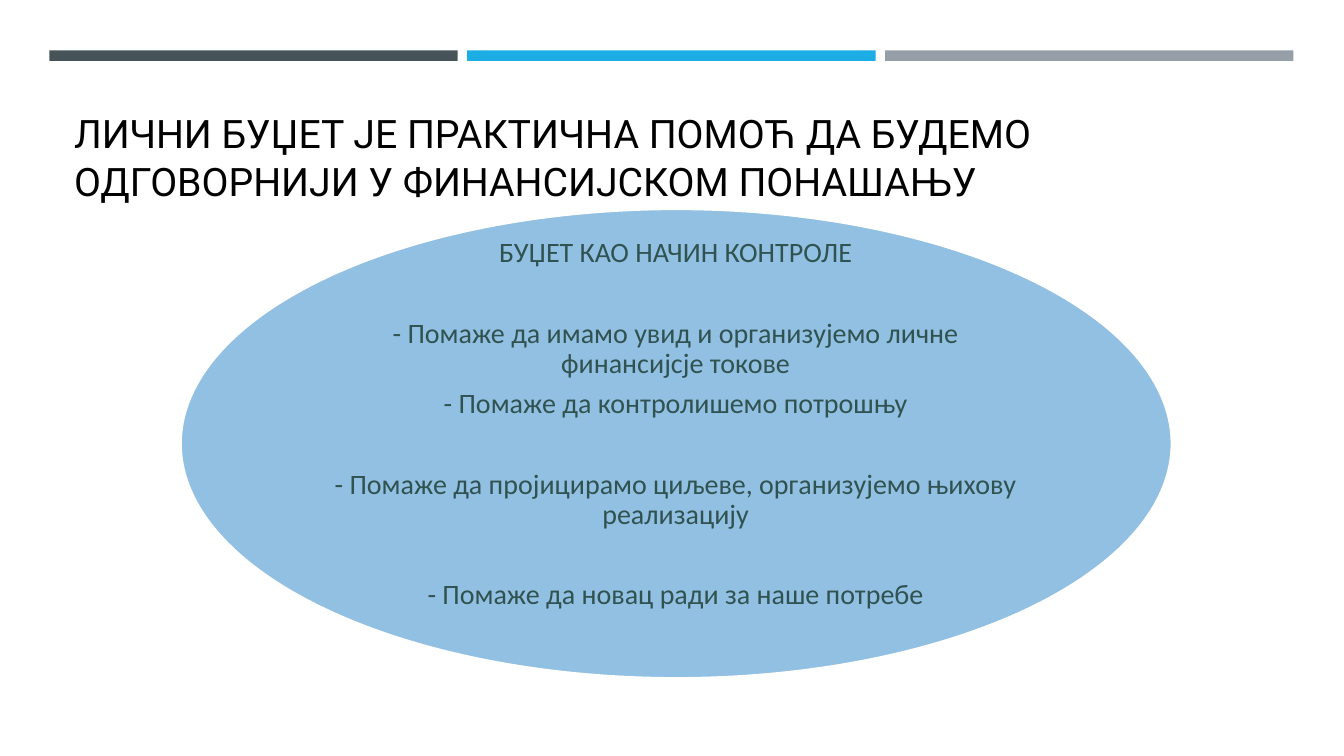
"""Build the slide on how a personal budget supports responsible finances."""
import lxml.etree
import pptx
import pptx.dml.color
import pptx.enum.shapes
import pptx.enum.text
import pptx.oxml.ns
import pptx.util

PX = 9525
THEME = {
    "bars": ("465359", "1CADE4", "969FA7"),
    "oval": "2683C6",
    "outline": "FFFFFF",
    "title": ("Roboto", 28, "000000"),
    "benefits": ("Calibri", 20, "305250"),
}
HEADLINE = "ЛИЧНИ БУЏЕТ ЈЕ ПРАКТИЧНА ПОМОЋ ДА БУДЕМО ОДГОВОРНИЈИ У ФИНАНСИЈСКОМ ПОНАШАЊУ"
TIGHT, WIDE = 7, 36
BENEFITS = (
    ("БУЏЕТ КАО НАЧИН КОНТРОЛЕ", WIDE),
    ("- Помаже да имамо увид и организујемо личне финансијсје токове", TIGHT),
    ("- Помаже да контролишемо потрошњу", WIDE),
    ("- Помаже да пројицирамо циљеве, организујемо њихову реализацију", WIDE),
    ("- Помаже да новац ради за наше потребе", TIGHT),
)


def place(shape, left, top, width, height):
    shape.left, shape.top = left * PX, top * PX
    shape.width, shape.height = width * PX, height * PX


def style(paragraph, role, alignment):
    name, size, color = THEME[role]
    paragraph.alignment = alignment
    paragraph.font.name = name
    paragraph.font.size = pptx.util.Pt(size)
    paragraph.font.color.rgb = pptx.dml.color.RGBColor.from_string(color)


deck = pptx.Presentation()
deck.slide_width, deck.slide_height = 1280 * PX, 720 * PX
slide = deck.slides.add_slide(deck.slide_layouts[1])
headline, benefits = slide.placeholders

for column, color in enumerate(THEME["bars"]):
    bar = slide.shapes.add_shape(pptx.enum.shapes.MSO_SHAPE.RECTANGLE, 0, 0, 0, 0)
    place(bar, 47 + 398 * column, 48, 389, 10)
    bar.shadow.inherit = False
    bar.fill.solid()
    bar.fill.fore_color.rgb = pptx.dml.color.RGBColor.from_string(color)
    bar.line.fill.background()

place(headline, 61, 74, 1158, 125)
headline.text_frame.text = HEADLINE
headline.text_frame.word_wrap = True
headline.text_frame.auto_size = pptx.enum.text.MSO_AUTO_SIZE.NONE
headline.text_frame.vertical_anchor = pptx.enum.text.MSO_ANCHOR.BOTTOM
style(headline.text_frame.paragraphs[0], "title", pptx.enum.text.PP_ALIGN.LEFT)

oval = slide.shapes.add_shape(pptx.enum.shapes.MSO_SHAPE.OVAL, 0, 0, 0, 0)
place(oval, 172, 199, 944, 447)
oval.shadow.inherit = False
oval.fill.solid()
oval.fill.fore_color.rgb = pptx.dml.color.RGBColor.from_string(THEME["oval"])
oval_color = oval.element.spPr.find(".//" + pptx.oxml.ns.qn("a:srgbClr"))
lxml.etree.SubElement(oval_color, pptx.oxml.ns.qn("a:alpha"), val="50000")
oval.line.color.rgb = pptx.dml.color.RGBColor.from_string(THEME["outline"])
oval.line.width = pptx.util.Pt(1.75)

slide.shapes.element.append(benefits.element)
place(benefits, 310, 227, 667, 394)
frame = benefits.text_frame
frame.word_wrap = True
frame.auto_size = pptx.enum.text.MSO_AUTO_SIZE.NONE
frame.vertical_anchor = pptx.enum.text.MSO_ANCHOR.TOP
frame.margin_left = frame.margin_right = frame.margin_top = frame.margin_bottom = 0
frame.text = "\n".join(text for text, gap in BENEFITS)
for paragraph, (text, gap) in zip(frame.paragraphs, BENEFITS):
    style(paragraph, "benefits", pptx.enum.text.PP_ALIGN.CENTER)
    paragraph.line_spacing = 0.9
    paragraph.space_before = pptx.util.Pt(0)
    paragraph.space_after = pptx.util.Pt(gap)
    properties = paragraph._p.get_or_add_pPr()
    properties.set("marL", "0")
    properties.set("indent", "0")
    lxml.etree.SubElement(properties, pptx.oxml.ns.qn("a:buNone"))
    properties.append(properties.find(pptx.oxml.ns.qn("a:defRPr")))

deck.save("out.pptx")
